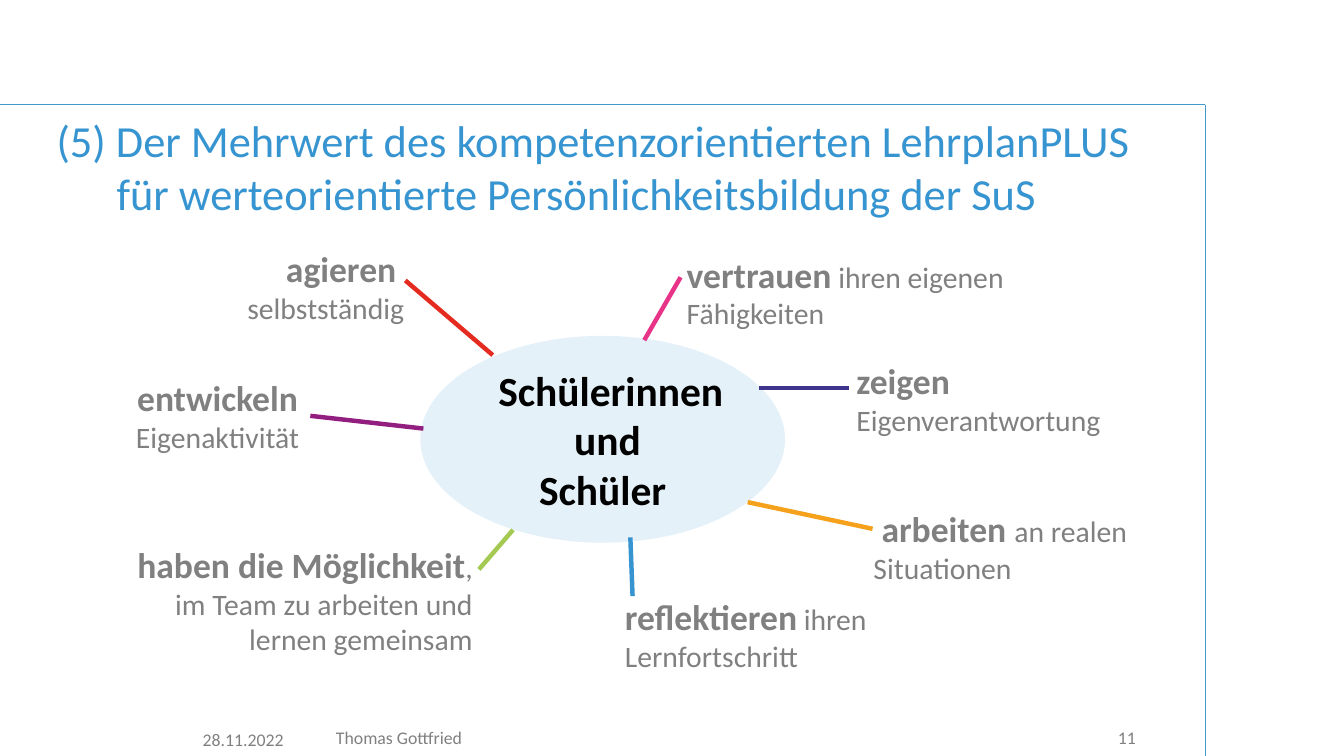
from pptx import Presentation
from pptx.dml.color import RGBColor
from pptx.enum.shapes import MSO_CONNECTOR, MSO_SHAPE
from pptx.enum.text import MSO_ANCHOR, PP_ALIGN
from pptx.oxml.ns import qn
from pptx.util import Pt
from lxml import etree

BLUE, GREY, BLACK = "3694D0", "808080", "000000"
LEFT, CENTER, RIGHT = PP_ALIGN.LEFT, PP_ALIGN.CENTER, PP_ALIGN.RIGHT


def color(hex_string):
    return RGBColor.from_string(hex_string)


class MindMapSlide:
    font = "Calibri"

    def __init__(self, presentation):
        self.slide = presentation.slides.add_slide(presentation.slide_layouts[6])

    def line(self, start, end, line_color, width=3):
        connector = self.slide.shapes.add_connector(
            MSO_CONNECTOR.STRAIGHT, *map(Pt, start + end))
        connector.line.color.rgb = color(line_color)
        connector.line.width = Pt(width)
        etree.SubElement(connector._element.spPr, qn("a:effectLst"))

    def frame(self, shape, anchor=MSO_ANCHOR.TOP, insets=(0, 0)):
        frame = shape.text_frame
        frame.word_wrap = True
        frame.vertical_anchor = anchor
        frame.margin_left = frame.margin_right = Pt(insets[0])
        frame.margin_top = frame.margin_bottom = Pt(insets[1])
        return frame

    def paragraph(self, frame, runs, align=LEFT, margin=0, indent=0):
        """Each run is (text, size, color, bold)."""
        first = frame.paragraphs[0]
        paragraph = frame.add_paragraph() if first.runs else first
        paragraph.alignment = align
        properties = paragraph._p.get_or_add_pPr()
        properties.set("marL", str(Pt(margin)))
        properties.set("indent", str(Pt(indent)))
        for text, size, text_color, bold in runs:
            if text == "\n":
                paragraph.add_line_break()
                continue
            run = paragraph.add_run()
            run.text = text
            run.font.name = self.font
            run.font.size = Pt(size)
            run.font.bold = bold
            run.font.color.rgb = color(text_color)

    def text_box(self, box, anchor=MSO_ANCHOR.TOP, insets=(0, 0)):
        return self.frame(self.slide.shapes.add_textbox(*map(Pt, box)), anchor, insets)

    def ellipse(self, box, fill, opacity):
        shape = self.slide.shapes.add_shape(MSO_SHAPE.OVAL, *map(Pt, box))
        shape.shadow.inherit = False
        shape.line.fill.background()
        shape.fill.solid()
        shape.fill.fore_color.rgb = color(fill)
        fill_color = shape._element.spPr.find(qn("a:solidFill")).find(qn("a:srgbClr"))
        etree.SubElement(fill_color, qn("a:alpha"), val=str(opacity * 1000))
        return self.frame(shape, MSO_ANCHOR.MIDDLE)

    def label(self, box, *paragraphs):
        """Each paragraph is (alignment, strong text, light text)."""
        frame = self.text_box(box, insets=(7.2, 3.6))
        for align, strong, light in paragraphs:
            runs = [(strong, 24, GREY, True), (light, 20, GREY, False)]
            self.paragraph(frame, [run for run in runs if run[0]], align)


def main():
    presentation = Presentation()
    presentation.slide_width, presentation.slide_height = Pt(907.2), Pt(510.5)
    page = MindMapSlide(presentation)

    # Frame lines
    corner = (813.6, 70.6)
    for end in ((0, 70.6), (813.6, 510.5)):
        page.line(corner, end, "4198CA", 0.5)

    # Title with hanging indent
    title = page.text_box((38.2, 72.5, 765, 80), MSO_ANCHOR.MIDDLE)
    page.paragraph(title, [
        ("(5) Der Mehrwert des kompetenzorientierten LehrplanPLUS", 30, BLUE, False),
        ("\n", 30, BLUE, False),
        ("für werteorientierte Persönlichkeitsbildung der SuS", 30, BLUE, False),
    ], margin=40.5, indent=-40.5)

    # Footer
    for text, box, align in (
            ("28.11.2022", (136.8, 492, 60.5, 15), LEFT),
            ("Thomas Gottfried", (226.8, 491, 477, 15), LEFT),
            ("11", (712, 491, 54.7, 15), RIGHT)):
        page.paragraph(page.text_box(box), [(text, 12, GREY, False)], align)

    # Centre
    center = page.ellipse((283.7, 226.8, 246.2, 139.7), BLUE, 13)
    for text, margin in (("Schülerinnen", 11), ("und", 6.5), ("Schüler", 0)):
        page.paragraph(center, [(text, 28, BLACK, True)], CENTER, margin)

    # Labels around the centre
    page.label((456.5, 167, 249, 60.5),
               (LEFT, "vertrauen", " ihren eigenen Fähigkeiten"))
    page.label((571, 239, 242.6, 60.5),
               (LEFT, "zeigen", ""), (LEFT, "", "Eigenverantwortung"))
    page.label((582.5, 339, 190.8, 60.5),
               (CENTER, "arbeiten ", "an realen"), (LEFT, "", "Situationen"))
    page.label((414.7, 398.2, 203.8, 60.5),
               (LEFT, "reflektieren", " ihren Lernfortschritt"))
    page.label((83.5, 250.6, 126.7, 60.5),
               (CENTER, "entwickeln ", "Eigenaktivität"))
    page.label((80, 363, 246.2, 85),
               (RIGHT, "haben die Möglichkeit", ", im Team zu arbeiten und lernen gemeinsam"))
    page.label((73.4, 163.4, 206.6, 60.5),
               (RIGHT, "agieren ", ""), (RIGHT, "", "selbstständig"))

    # Spokes
    for start, end, spoke_color in (
            ((434.9, 229.7), (459.4, 187.2), "E73488"),
            ((512.6, 262), (573.1, 262), "3F348B"),
            ((504.7, 339.1), (589, 357.1), "F6A11C"),
            ((332.6, 239.8), (273.6, 189.4), "E52B1F"),
            ((427, 402.5), (425.5, 362.9), BLUE),
            ((323.3, 384.5), (346.3, 357.8), "A5CA53"),
            ((209.5, 280.8), (285.8, 289.4), "921F80")):
        page.line(start, end, spoke_color)

    presentation.save("out.pptx")


if __name__ == "__main__":
    main()
